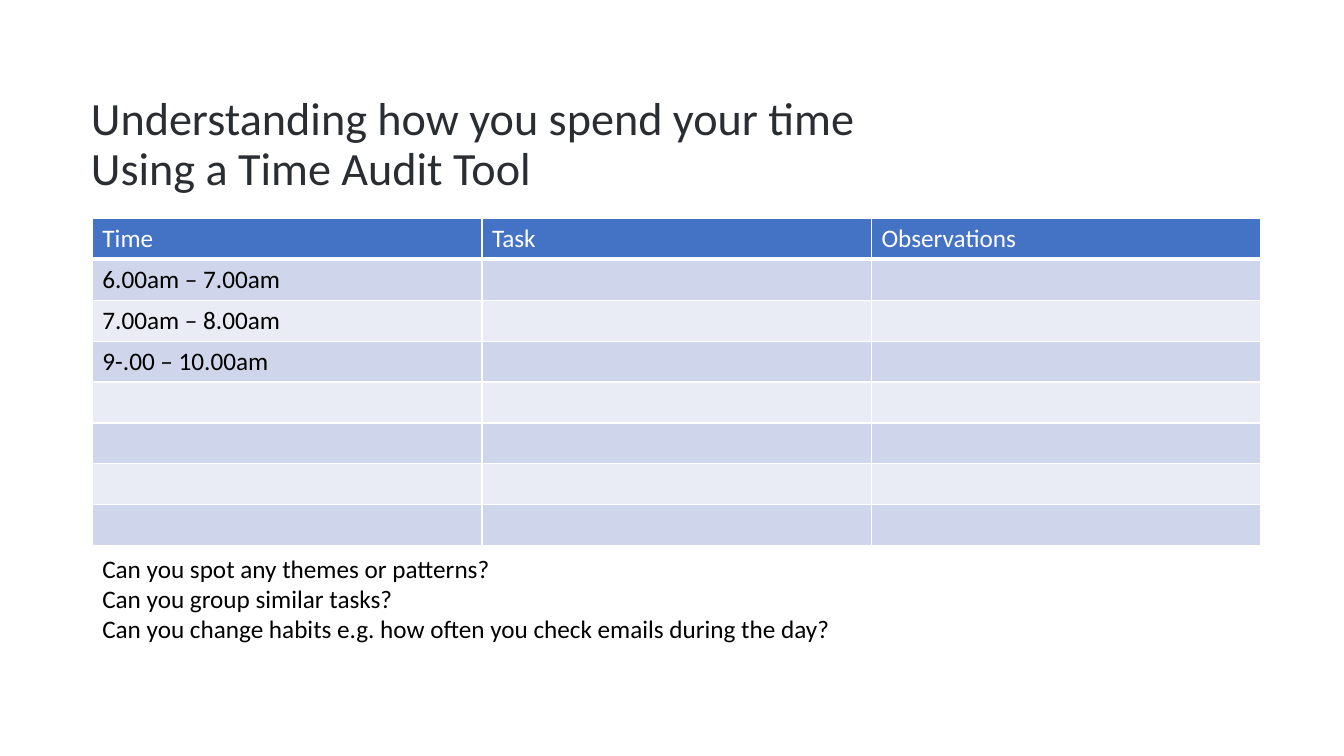
from lxml import etree
from pptx import Presentation
from pptx.dml.color import RGBColor
from pptx.enum.text import MSO_ANCHOR, MSO_AUTO_SIZE, PP_ALIGN
from pptx.oxml.ns import qn
from pptx.util import Pt

PX = 9525
LEFT, MIDDLE = PP_ALIGN.LEFT, MSO_ANCHOR.MIDDLE
GROW, FIXED = MSO_AUTO_SIZE.SHAPE_TO_FIT_TEXT, MSO_AUTO_SIZE.NONE
COLORS = {
    "title": "2A2D31", "text": "000000", "white": "FFFFFF",
    "header": "4472C4", "odd": "CFD5EA", "even": "E9EBF5",
}
HEADERS = ["Time", "Task", "Observations"]
TIMES = ["6.00am – 7.00am", "7.00am – 8.00am", "9-.00 – 10.00am"]
BODY_ROWS = 7
QUESTIONS = [
    "Can you spot any themes or patterns?",
    "Can you group similar tasks?",
    "Can you change habits e.g. how often you check emails during the day?",
]


class SlideBuilder:
    """Holds the slide and its style, and adds each kind of element."""

    def __init__(self, prs, font="Calibri"):
        self.s = prs.slides.add_slide(prs.slide_layouts[5])
        self.font = font

    def color(self, name):
        return RGBColor.from_string(COLORS[name])

    def format_text(self, tf, size, color):
        for p in tf.paragraphs:
            p.alignment = LEFT
            for r in p.runs:
                r.font.name = self.font
                r.font.size = Pt(size)
                r.font.bold = False
                r.font.color.rgb = self.color(color)

    def place(self, sp, x, y, w, h):
        sp.left, sp.top, sp.width, sp.height = [v * PX for v in (x, y, w, h)]

    def title(self, text, *box):
        sp = self.s.shapes.title
        self.place(sp, *box)
        tf = sp.text_frame
        tf.text = text
        tf.word_wrap = True
        tf.auto_size = FIXED
        tf.vertical_anchor = MIDDLE
        tf.paragraphs[0].line_spacing = 0.9
        self.format_text(tf, 33, "title")

    def text(self, lines, *box):
        sp = self.s.shapes.add_textbox(*[v * PX for v in box])
        tf = sp.text_frame
        tf.word_wrap = True
        tf.auto_size = GROW
        tf.text = "\n".join(lines)
        self.format_text(tf, 18, "text")

    def border(self, cell, side, width):
        tc_pr = cell._tc.get_or_add_tcPr()
        ln = etree.SubElement(tc_pr, qn(f"a:ln{side}"), w=str(Pt(width)))
        fill = etree.SubElement(ln, qn("a:solidFill"))
        etree.SubElement(fill, qn("a:srgbClr"), val=COLORS["white"])

    def table(self, rows, x, y, col_w, row_h):
        n_cols = len(rows[0])
        box = (x, y, col_w * n_cols, row_h * len(rows))
        frame = self.s.shapes.add_table(len(rows), n_cols, *[v * PX for v in box])
        table = frame.table
        for column in table.columns:
            column.width = col_w * PX
        for i, values in enumerate(rows):
            table.rows[i].height = row_h * PX
            band = "header" if i == 0 else ("even", "odd")[i % 2]
            for j, value in enumerate(values):
                cell = table.cell(i, j)
                for side in "LRTB":
                    self.border(cell, side, 3 if i == 0 and side == "B" else 1)
                cell.fill.solid()
                cell.fill.fore_color.rgb = self.color(band)
                cell.text_frame.text = value
                self.format_text(cell.text_frame, 18, "text" if i else "white")


def main():
    prs = Presentation()
    prs.slide_width, prs.slide_height = 1280 * PX, 720 * PX
    slide = SlideBuilder(prs)
    times = TIMES + [""] * (BODY_ROWS - len(TIMES))
    rows = [HEADERS] + [[time, "", ""] for time in times]
    slide.table(rows, 88, 208, 371, 39)
    slide.title("Understanding how you spend your time\vUsing a Time Audit Tool",
                77, 69, 1098, 139)
    slide.text(QUESTIONS, 88, 522, 1113, 97)
    prs.save("out.pptx")


if __name__ == "__main__":
    main()
